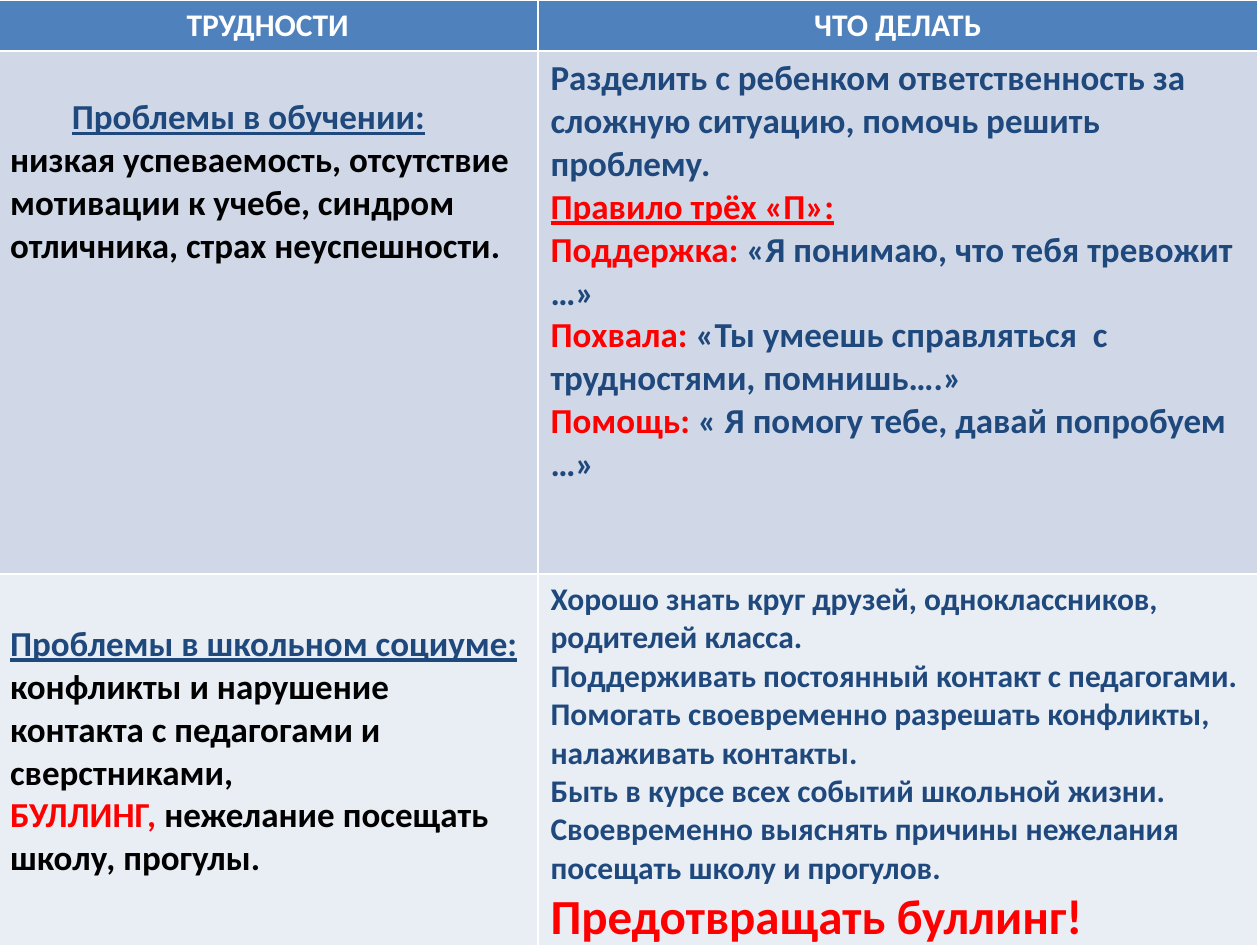
from pptx import Presentation
from pptx.dml.color import RGBColor
from pptx.enum.text import PP_ALIGN
from pptx.util import Inches, Pt

CENTER = PP_ALIGN.CENTER
LEFT = PP_ALIGN.LEFT
WHITE, BLACK, NAVY, RED = "FFFFFF", "000000", "1F497D", "FF0000"
HEADER_FILL, FIRST_FILL, SECOND_FILL = "4F81BD", "D0D8E8", "E9EDF4"
COLUMN_WIDTHS = (4.29, 5.71)
ROW_HEIGHTS = (0.39, 4.15, 3.22)

HEADERS = ("ТРУДНОСТИ", "ЧТО ДЕЛАТЬ")

LEARNING_PROBLEMS = [
    [("Проблемы в обучении:", NAVY, True),
     (" низкая успеваемость, отсутствие мотивации к учебе, синдром "
      "отличника, страх неуспешности.", BLACK)],
]
LEARNING_ADVICE = [
    [("Разделить с ребенком ответственность за сложную ситуацию, "
      "помочь решить проблему.", NAVY)],
    [("Правило трёх «П»:", RED, True)],
    [("Поддержка: ", RED), ("«Я понимаю, что тебя тревожит …»", NAVY)],
    [("Похвала: ", RED),
     ("«Ты умеешь справляться  с трудностями, помнишь….»", NAVY)],
    [("Помощь:", RED), (" « Я помогу тебе, давай попробуем …»", NAVY)],
]
SOCIAL_PROBLEMS = [
    [("Проблемы в школьном социуме:", NAVY, True)],
    [("конфликты и нарушение контакта с педагогами и сверстниками,", BLACK)],
    [("БУЛЛИНГ, ", RED), ("нежелание посещать школу, прогулы.", BLACK)],
]
SOCIAL_ADVICE = [
    [("Хорошо знать круг друзей, одноклассников,", NAVY)],
    [("родителей класса.", NAVY)],
    [("Поддерживать постоянный контакт с педагогами. Помогать "
      "своевременно разрешать конфликты, налаживать контакты.", NAVY)],
    [("Быть в курсе всех событий школьной жизни.", NAVY)],
    [("Своевременно выяснять причины нежелания посещать школу и прогулов.",
      NAVY)],
    [("Предотвращать буллинг!", RED, False, 28)],
]


def color(value):
    return RGBColor.from_string(value)


def add_run(paragraph, text, run_color, underline=False, size=18):
    run = paragraph.add_run()
    run.text = text
    font = run.font
    font.name = "Calibri"
    font.size = Pt(size)
    font.bold = True
    font.underline = underline
    font.color.rgb = color(run_color)


def fill_cell(cell, fill, paragraphs, size, alignment=LEFT, top=0.05):
    cell.fill.solid()
    cell.fill.fore_color.rgb = color(fill)
    cell.margin_top = Inches(top)
    text_frame = cell.text_frame
    for index, runs in enumerate(paragraphs):
        paragraph = text_frame.add_paragraph() if index else text_frame.paragraphs[0]
        paragraph.alignment = alignment
        for text, run_color, *style in runs:
            underline, run_size = (style + [False, size][len(style):])
            add_run(paragraph, text, run_color, underline, run_size)


def add_advice_table(slide, left, top, width, height):
    frame = slide.shapes.add_table(
        len(ROW_HEIGHTS), len(COLUMN_WIDTHS), left, top, width, height)
    table = frame.table
    for column, column_width in zip(table.columns, COLUMN_WIDTHS):
        column.width = Inches(column_width)
    for row, row_height in zip(table.rows, ROW_HEIGHTS):
        row.height = Inches(row_height)

    for index, header in enumerate(HEADERS):
        fill_cell(table.cell(0, index), HEADER_FILL, [[(header, WHITE)]], 18, CENTER)
    learning = table.cell(1, 0)
    fill_cell(learning, FIRST_FILL, LEARNING_PROBLEMS, 20, top=0.36)
    properties = learning.text_frame.paragraphs[0]._p.get_or_add_pPr()
    properties.set("indent", str(Inches(0.49)))
    fill_cell(table.cell(1, 1), FIRST_FILL, LEARNING_ADVICE, 20)
    fill_cell(table.cell(2, 0), SECOND_FILL, SOCIAL_PROBLEMS, 20, top=0.39)
    fill_cell(table.cell(2, 1), SECOND_FILL, SOCIAL_ADVICE, 18)


def main():
    presentation = Presentation()
    presentation.slide_width = Inches(10)
    presentation.slide_height = Inches(7.5)
    slide = presentation.slides.add_slide(presentation.slide_layouts[6])
    add_advice_table(slide, Inches(-0.02), Inches(0), Inches(10), Inches(7.76))
    presentation.save("out.pptx")


if __name__ == "__main__":
    main()
